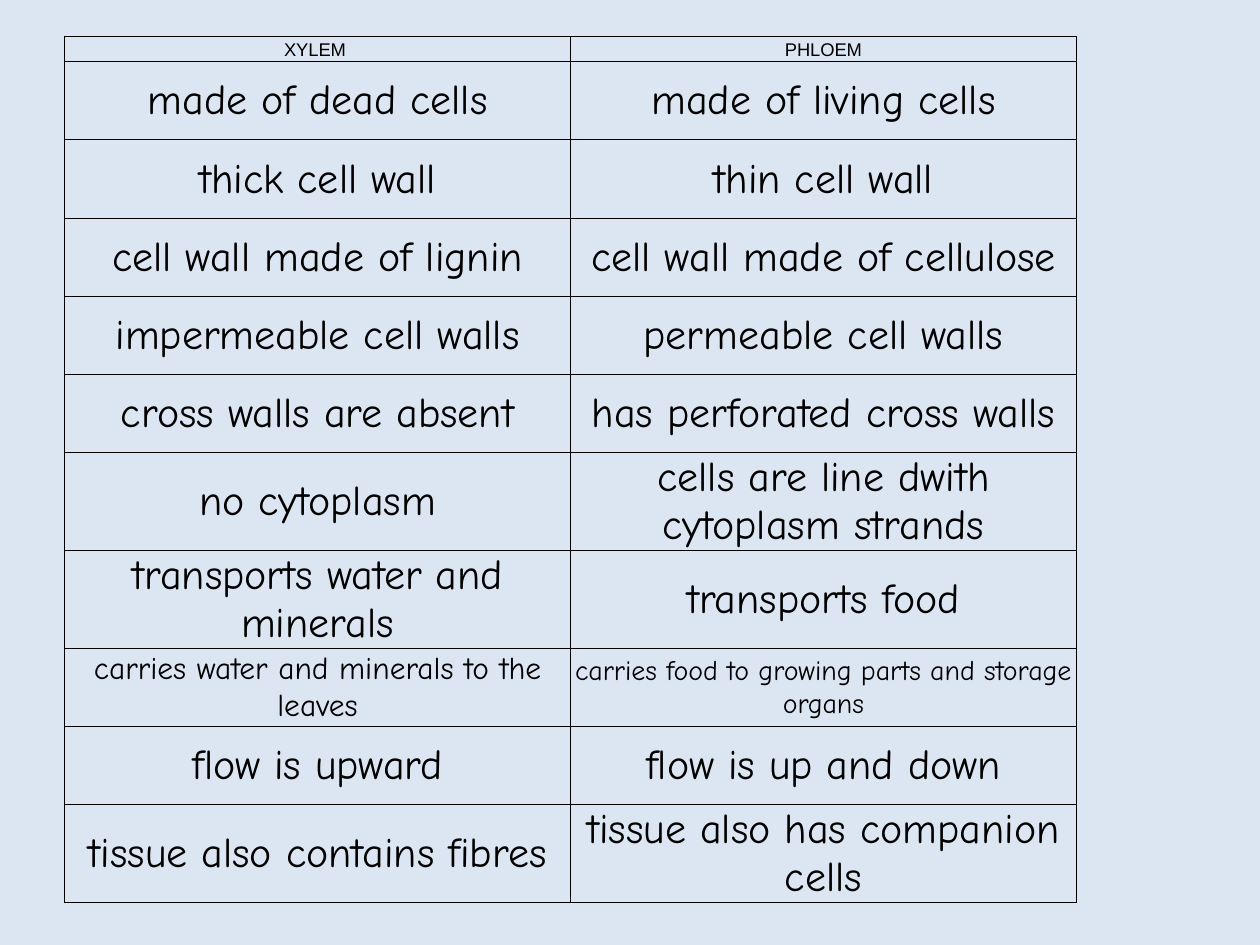
from dataclasses import dataclass

from lxml.etree import SubElement
from pptx import Presentation
from pptx.dml.color import RGBColor
from pptx.enum.text import MSO_ANCHOR, PP_ALIGN
from pptx.oxml.ns import qn
from pptx.table import _Cell
from pptx.util import Pt

COLORS = {"background": "DCE6F2", "ink": "000000"}
LEFT, TOP = 36.9, 20.9
COL_W, HEADER_H, ROW_H = 289.1, 14.3, 44.7
INSET, BORDER = 0.7, 0.5


@dataclass(frozen=True)
class Row:
    xylem: str
    phloem: str
    sizes: tuple[float, float] = (24, 24)
    font: str = "Comic Neue"
    height: float = ROW_H


ROWS = [
    Row("XYLEM ", "PHLOEM", (10.5, 10.5), "Arial", HEADER_H),
    Row("made of dead cells", "made of living cells"),
    Row("thick cell wall", "thin cell wall"),
    Row("cell wall made of lignin", "cell wall made of cellulose"),
    Row("impermeable cell walls", "permeable cell walls"),
    Row("cross walls are absent", "has perforated cross walls"),
    Row("no cytoplasm", "cells are line dwith cytoplasm strands"),
    Row("transports water and minerals", "transports food"),
    Row("carries water and minerals to the leaves",
        "carries food to growing parts and storage organs", (18, 16)),
    Row("flow is upward", "flow is up and down"),
    Row("tissue also contains fibres", "tissue also has companion cells"),
]


def add_borders(cell: _Cell) -> None:
    """Outline all four sides; must run before the cell fill is set."""
    props = cell._tc.get_or_add_tcPr()
    for side in ("a:lnL", "a:lnR", "a:lnT", "a:lnB"):
        line = SubElement(props, qn(side), w=str(Pt(BORDER)))
        fill = SubElement(line, qn("a:solidFill"))
        SubElement(fill, qn("a:srgbClr"), val=COLORS["ink"])


def fill_cell(cell: _Cell, text: str, size: float, font: str) -> None:
    add_borders(cell)
    cell.fill.background()
    cell.vertical_anchor = MSO_ANCHOR.MIDDLE
    cell.margin_left = cell.margin_right = cell.margin_top = Pt(INSET)
    cell.margin_bottom = Pt(0)
    p = cell.text_frame.paragraphs[0]
    p.text = text
    p.alignment = PP_ALIGN.CENTER
    r = p.runs[0]
    r.font.size = Pt(size)
    r.font.name = font
    r.font.bold = False
    r.font.color.rgb = RGBColor.from_string(COLORS["ink"])


def main() -> None:
    prs = Presentation()
    prs.slide_width, prs.slide_height = Pt(720), Pt(540)
    s = prs.slides.add_slide(prs.slide_layouts[6])
    bg = s.background.fill
    bg.solid()
    bg.fore_color.rgb = RGBColor.from_string(COLORS["background"])

    height = sum(row.height for row in ROWS)
    table = s.shapes.add_table(len(ROWS), 2, Pt(LEFT), Pt(TOP),
                               Pt(2 * COL_W), Pt(height)).table
    table.first_row = table.horz_banding = False
    for col in table.columns:
        col.width = Pt(COL_W)
    for i, row in enumerate(ROWS):
        table.rows[i].height = Pt(row.height)
        for j, text in enumerate((row.xylem, row.phloem)):
            fill_cell(table.cell(i, j), text, row.sizes[j], row.font)

    prs.save("out.pptx")


if __name__ == "__main__":
    main()
